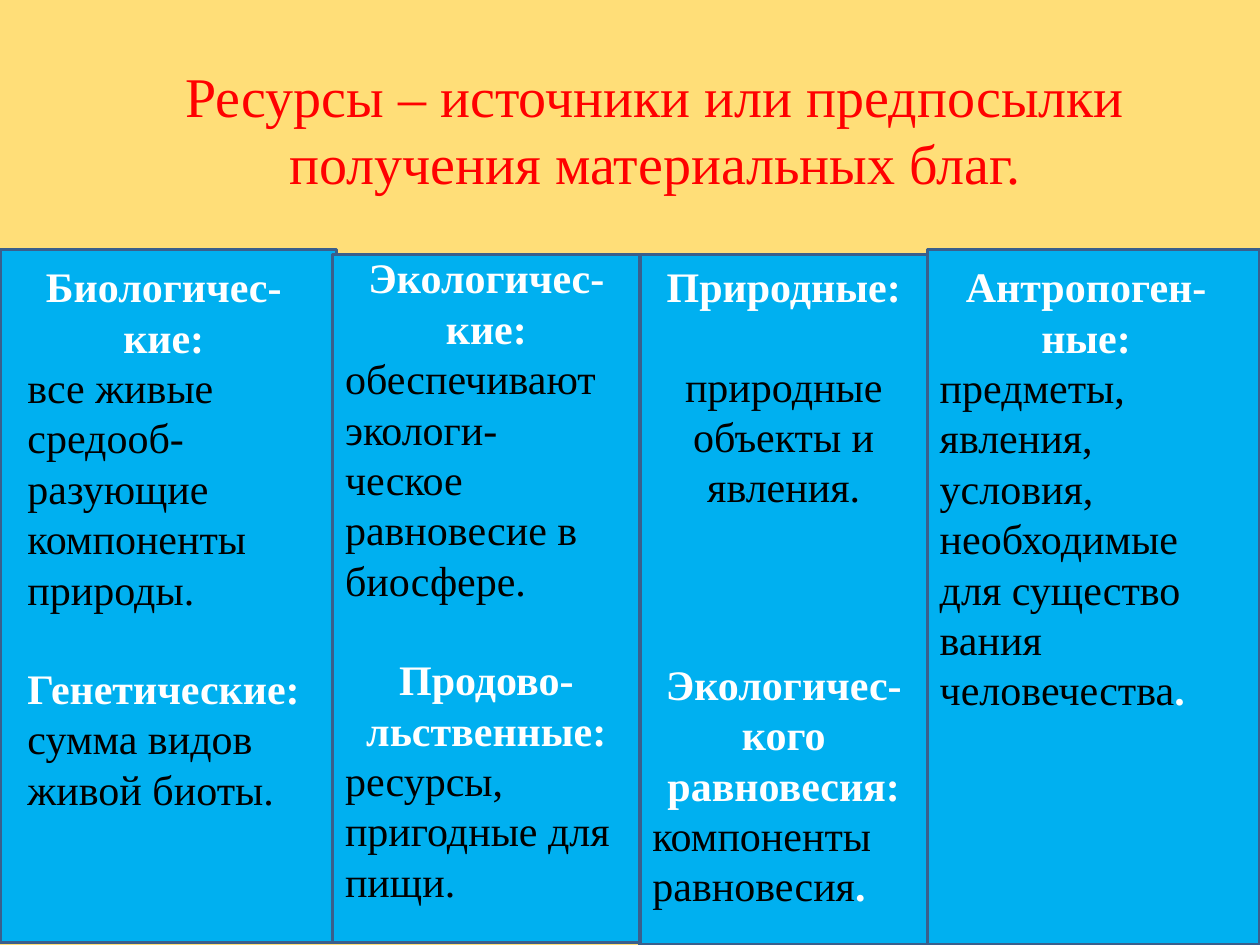
from pptx import Presentation
from pptx import util as u
from pptx.dml.color import RGBColor
from pptx.enum import shapes, text

# Grid of 100 columns by 75 rows over the slide
COLS, ROWS = 100, 75
W, H = u.Inches(10), u.Inches(7.5)
FONT = "Times New Roman"
BACK, PANEL, EDGE = "FFDE78", "00B0F0", "3A5F8C"
RED, WHITE, BLACK = "FF0000", "FFFFFF", "000000"
LINE = 28  # height of one line of body text, in points

TITLE = {"size": u.Pt(32), "bold": False, "color": RED}
HEAD = {"size": u.Pt(24), "bold": True, "color": WHITE}
BODY = {"size": u.Pt(24), "bold": False, "color": BLACK}

LEFT, CENTER = text.PP_ALIGN.LEFT, text.PP_ALIGN.CENTER


def rgb(value):
    return RGBColor.from_string(value)


def place(left, top, width, height):
    """Turn grid columns and rows into slide lengths."""
    return (int(W * left / COLS), int(H * top / ROWS),
            int(W * width / COLS), int(H * height / ROWS))


def para(*runs, align=LEFT, gap=0):
    """Describe a paragraph; gap counts the free lines above it."""
    return runs, align, gap


def head(words, align=CENTER, gap=0):
    return para((words, HEAD), align=align, gap=gap)


def body(words, align=LEFT, gap=0):
    return para((words, BODY), align=align, gap=gap)


def add_panel(s, box):
    sp = s.shapes.add_shape(shapes.MSO_SHAPE.RECTANGLE, *place(*box))
    sp.shadow.inherit = False
    sp.fill.solid()
    sp.fill.fore_color.rgb = rgb(PANEL)
    sp.line.color.rgb = rgb(EDGE)
    sp.line.width = u.Pt(2)


def add_run(p, words, style):
    r = p.add_run()
    r.text = words
    r.font.name = FONT
    for name, value in style.items():
        if name == "color":
            r.font.color.rgb = rgb(value)
        else:
            setattr(r.font, name, value)


def add_text(s, box, paragraphs):
    tf = s.shapes.add_textbox(*place(*box)).text_frame
    tf.word_wrap = True
    for i, (runs, align, gap) in enumerate(paragraphs):
        p = tf.add_paragraph() if i else tf.paragraphs[0]
        p.alignment = align
        if gap:
            p.space_before = u.Pt(gap * LINE)
        for words, style in runs:
            add_run(p, words, style)


# Each resource column: panel box, text box, paragraphs
COLUMNS = [
    ((0, 19.8, 26.7, 55), (1.2, 20.2, 23.6, 45.4), [
        head("Биологичес- кие:"),
        body("все живые средооб-"),
        body("разующие"),
        body("компоненты природы."),
        head("Генетические:", align=LEFT, gap=1),
        body("сумма видов живой биоты."),
    ]),
    ((26.4, 20.2, 24.4, 54.6), (26.4, 19.5, 24.4, 57.6), [
        head("Экологичес-кие:"),
        body("обеспечивают экологи-"),
        body("ческое равновесие в биосфере."),
        head("Продово-льственные:", gap=1),
        body("ресурсы, пригодные для пищи."),
    ]),
    ((50.8, 20.2, 22.8, 54.8), (50.8, 20.2, 22.8, 53.5), [
        head("Природные:"),
        body("природные объекты и явления.", align=CENTER, gap=1),
        head("Экологичес-кого равновесия:", gap=3),
        para(("компоненты равновесия", BODY), (".", HEAD)),
    ]),
    ((73.6, 19.8, 26.4, 55.2), (73.6, 20.2, 25.2, 37.4), [
        head("Антропоген-ные:"),
        body("предметы, явления, условия, необходимые для существо"),
        para(("вания человечества", BODY), (".", HEAD)),
    ]),
]


def main():
    prs = Presentation()
    prs.slide_width, prs.slide_height = W, H
    s = prs.slides.add_slide(prs.slide_layouts[6])

    # Background
    s.background.fill.solid()
    s.background.fill.fore_color.rgb = rgb(BACK)

    # Title
    add_text(s, (6.7, 4.4, 90.6, 11.8), [
        para(("Ресурсы – источники или предпосылки получения материальных благ.",
              TITLE), align=CENTER)])

    # Resource columns
    for panel, box, paragraphs in COLUMNS:
        add_panel(s, panel)
        add_text(s, box, paragraphs)

    prs.save("out.pptx")


if __name__ == "__main__":
    main()
